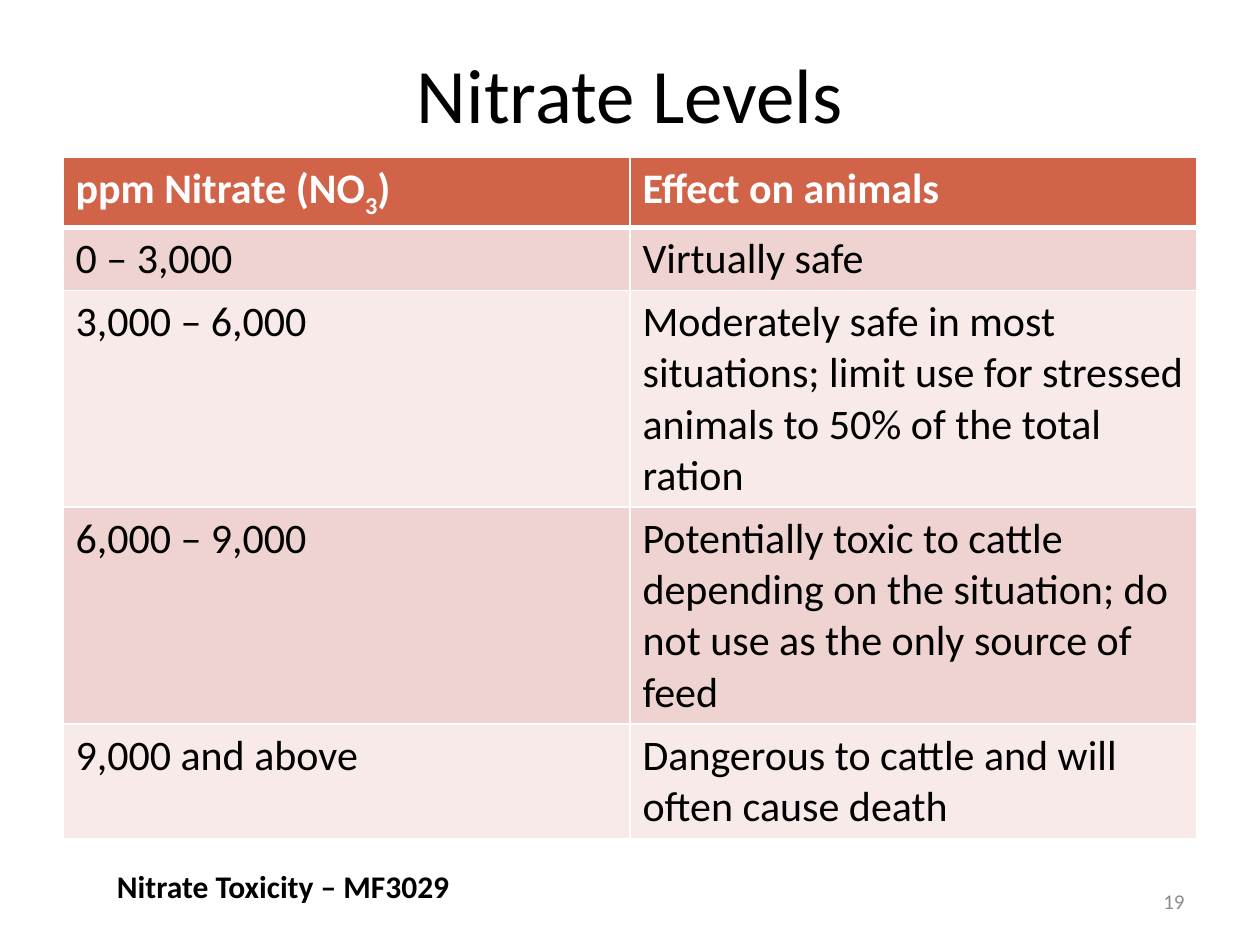
from lxml.etree import SubElement
from pptx import Presentation
from pptx.dml.color import RGBColor
from pptx.enum.text import MSO_ANCHOR as Anchor, PP_ALIGN as Align
from pptx.oxml.ns import qn
from pptx.util import Inches, Pt

FONT = "Calibri"
BLACK, WHITE, GREY = "000000", "FFFFFF", "8C8C8C"
HEADER_FILL = "D16349"
BAND_FILLS = ["EED3D0", "F7EAE9"]

# A cell is a list of (text, baseline shift in percent) runs or a plain string
ROWS = [
    ([("ppm Nitrate (NO", 0), ("3", -25), (")", 0)], "Effect on animals"),
    ("0 – 3,000", "Virtually safe"),
    ("3,000 – 6,000", "Moderately safe in most situations; limit use for "
                      "stressed animals to 50% of the total ration"),
    ("6,000 – 9,000", "Potentially toxic to cattle depending on the situation; "
                      "do not use as the only source of feed"),
    ("9,000 and above", "Dangerous to cattle and will often cause death"),
]
ROW_HEIGHTS = [0.54, 0.5, 1.72, 1.72, 0.91]


def rgb(color):
    return RGBColor.from_string(color)


def write(tf, text, size=24, color=BLACK, bold=False, align=Align.LEFT):
    p = tf.paragraphs[0]
    p.alignment = align
    runs = [(text, 0)] if isinstance(text, str) else text
    for words, shift in runs:
        r = p.add_run()
        r.text = words
        r.font.name, r.font.size, r.font.bold = FONT, Pt(size), bold
        r.font.color.rgb = rgb(color)
        if shift:
            r._r.get_or_add_rPr().set("baseline", str(shift * 1000))


def add_text(slide, text, left, top, width, height, anchor=Anchor.TOP, **fmt):
    s = slide.shapes.add_textbox(Inches(left), Inches(top),
                                 Inches(width), Inches(height))
    tf = s.text_frame
    tf.word_wrap = True
    tf.vertical_anchor = anchor
    write(tf, text, **fmt)


def set_borders(cell, color, left=1, right=1, top=1, bottom=1):
    tcPr = cell._tc.get_or_add_tcPr()
    widths = {"a:lnL": left, "a:lnR": right, "a:lnT": top, "a:lnB": bottom}
    for tag, width in widths.items():
        ln = SubElement(tcPr, qn(tag), w=str(Pt(width)))
        fill = SubElement(ln, qn("a:solidFill"))
        SubElement(fill, qn("a:srgbClr"), val=color)


def add_levels_table(slide, left, top, width):
    s = slide.shapes.add_table(len(ROWS), 2, Inches(left), Inches(top),
                               Inches(width), Inches(sum(ROW_HEIGHTS)))
    table = s.table
    for i, (texts, height) in enumerate(zip(ROWS, ROW_HEIGHTS)):
        header = i == 0
        table.rows[i].height = Inches(height)
        for cell, text in zip(table.rows[i].cells, texts):
            # Thick rule between the header and the body
            set_borders(cell, WHITE, top=3 if i == 1 else 1,
                        bottom=3 if header else 1)
            cell.fill.solid()
            cell.fill.fore_color.rgb = rgb(
                HEADER_FILL if header else BAND_FILLS[(i - 1) % 2])
            write(cell.text_frame, text, bold=header,
                  color=WHITE if header else BLACK)


def main():
    prs = Presentation()
    prs.slide_width, prs.slide_height = Inches(10), Inches(7.5)
    slide = prs.slides.add_slide(prs.slide_layouts[6])

    # Title
    add_text(slide, "Nitrate Levels", 0.5, 0.3, 9, 0.87,
             anchor=Anchor.MIDDLE, size=44, align=Align.CENTER)
    # Nitrate levels and their effects
    add_levels_table(slide, 0.5, 1.25, 9)
    # Slide number and publication reference
    add_text(slide, "19", 7.17, 6.95, 2.33, 0.4, anchor=Anchor.MIDDLE,
             size=12, color=GREY, align=Align.RIGHT)
    add_text(slide, "Nitrate Toxicity – MF3029", 0.83, 6.83, 7.08, 0.4,
             size=18, bold=True)

    prs.save("out.pptx")


if __name__ == "__main__":
    main()
